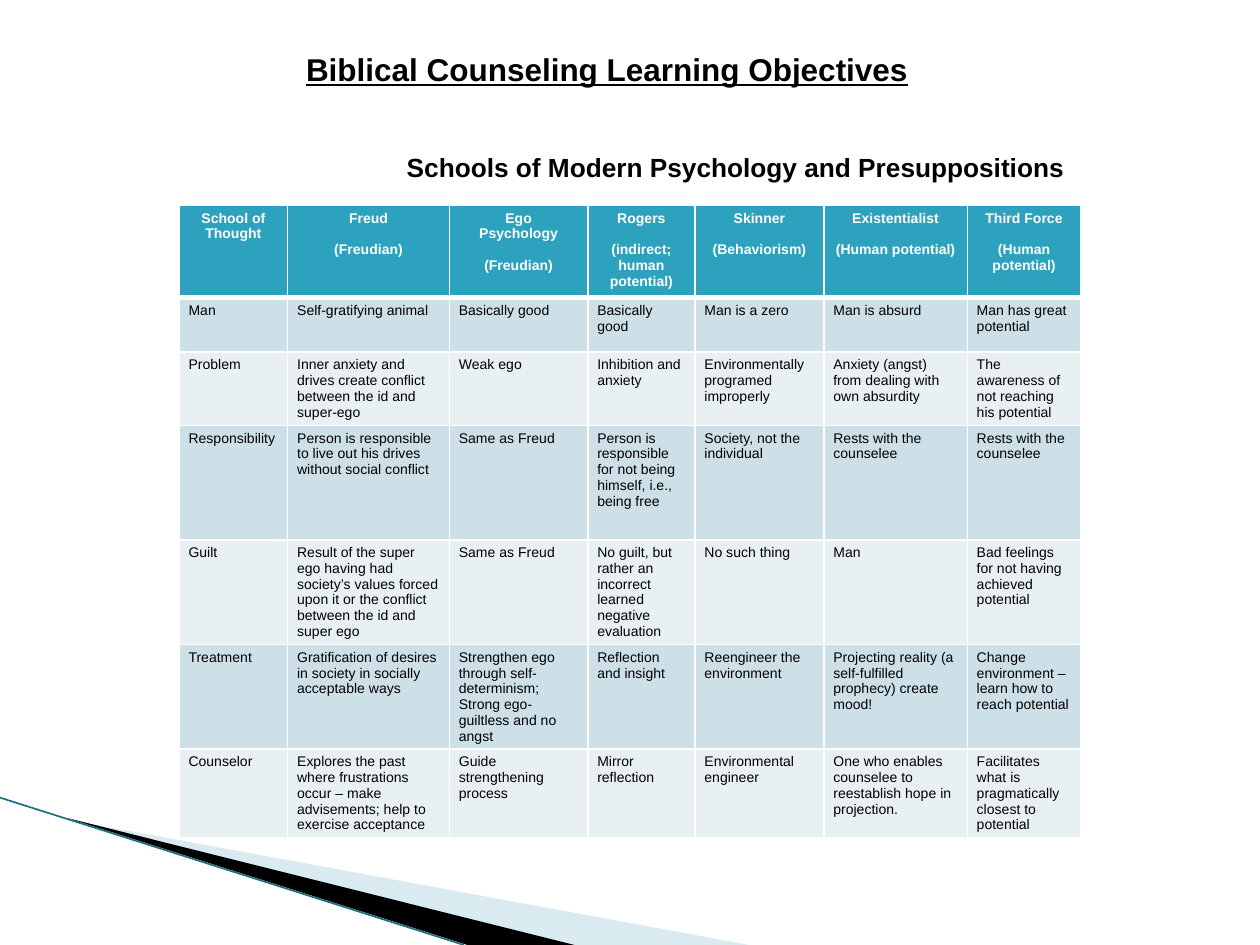
from dataclasses import dataclass
from typing import NamedTuple

from lxml.etree import SubElement
from pptx import Presentation
from pptx.dml.color import RGBColor
from pptx.enum.text import PP_ALIGN
from pptx.oxml.ns import qn
from pptx.util import Cm, Pt


@dataclass(frozen=True)
class Theme:
    font: str = "Arial"
    title_size: float = 18
    subtitle_size: float = 15
    table_size: float = 8
    ink: str = "000000"
    paper: str = "FFFFFF"
    header: str = "2DA2BF"
    bands: tuple = ("CDE0E8", "E8F0F4")
    pale_wedge: str = "A0CBDC"
    edge: str = "1E7080"


class Box(NamedTuple):
    """A region of the slide in centimetres."""
    left: float
    top: float
    width: float
    height: float

    def lengths(self):
        return [Cm(value) for value in self]


THEME = Theme()
COLUMN_WIDTHS = (2.19, 3.26, 2.79, 2.16, 2.6, 2.89, 2.29)
ROW_HEIGHTS = (1.86, 1.1, 1.47, 2.31, 2.08, 2.08, 1.75)
SCHOOLS = [
    ("School of Thought",),
    ("Freud", "(Freudian)"),
    ("Ego", "Psychology", "(Freudian)"),
    ("Rogers", "(indirect; human potential)"),
    ("Skinner", "(Behaviorism)"),
    ("Existentialist", "(Human potential)"),
    ("Third Force", "(Human potential)"),
]
PRESUPPOSITIONS = [
    ["Man", "Self-gratifying animal", "Basically good", "Basically good",
     "Man is a zero", "Man is absurd", "Man has great potential"],
    ["Problem",
     "Inner anxiety and drives create conflict between the id and super-ego",
     "Weak ego", "Inhibition and anxiety",
     "Environmentally programed improperly",
     "Anxiety (angst) from dealing with own absurdity",
     "The awareness of not reaching his potential"],
    ["Responsibility",
     "Person is responsible to live out his drives without social conflict",
     "Same as Freud",
     "Person is responsible for not being himself, i.e., being free",
     "Society, not the individual", "Rests with the counselee",
     "Rests with the counselee"],
    ["Guilt",
     "Result of the super ego having had society’s values forced upon it "
     "or the conflict between the id and super ego",
     "Same as Freud",
     "No guilt, but rather an incorrect learned negative evaluation",
     "No such thing", "Man",
     "Bad feelings for not having achieved potential"],
    ["Treatment",
     "Gratification of desires in society in socially acceptable ways",
     ("Strengthen ego through self-determinism;",
      "Strong ego-guiltless and no angst"),
     "Reflection and insight", "Reengineer the environment",
     "Projecting reality (a self-fulfilled prophecy) create mood!",
     "Change environment – learn how to reach potential"],
    ["Counselor",
     "Explores the past where frustrations occur – make advisements; "
     "help to exercise acceptance",
     "Guide strengthening process", "Mirror reflection",
     "Environmental engineer",
     "One who enables counselee to reestablish hope in projection.",
     "Facilitates what is pragmatically closest to potential"],
]


def rgb(color):
    return RGBColor.from_string(color)


def write_text(frame, text, size, color=THEME.ink, bold=False,
               underline=False, align=PP_ALIGN.LEFT, last_gap=0):
    """Write a string or a tuple of paragraphs, with a gap above the last."""
    lines = (text,) if isinstance(text, str) else text
    for index, line in enumerate(lines):
        paragraph = frame.paragraphs[0] if index == 0 else frame.add_paragraph()
        paragraph.alignment = align
        if last_gap and 0 < index == len(lines) - 1:
            paragraph.space_before = Pt(last_gap)
        run = paragraph.add_run()
        run.text = line
        font = run.font
        font.name, font.size = THEME.font, Pt(size)
        font.bold, font.underline = bold, underline
        font.color.rgb = rgb(color)


def add_heading(slide, box, text, wrap=True, **text_format):
    frame = slide.shapes.add_textbox(*box.lengths()).text_frame
    frame.word_wrap = wrap
    write_text(frame, text, bold=True, **text_format)


def style_cell(cell, fill, bottom_width=1):
    properties = cell._tc.get_or_add_tcPr()
    widths = {"a:lnL": 1, "a:lnR": 1, "a:lnT": 1, "a:lnB": bottom_width}
    for side, width in widths.items():
        border = SubElement(properties, qn(side), w=str(Pt(width)))
        solid = SubElement(border, qn("a:solidFill"))
        SubElement(solid, qn("a:srgbClr"), val=THEME.paper)
    cell.fill.solid()
    cell.fill.fore_color.rgb = rgb(fill)
    cell.margin_left = cell.margin_right = Cm(0.19)
    cell.margin_top = cell.margin_bottom = Cm(0.1)


def add_schools_table(slide, box):
    table = slide.shapes.add_table(
        len(ROW_HEIGHTS), len(COLUMN_WIDTHS), *box.lengths()).table
    for column, width in zip(table.columns, COLUMN_WIDTHS):
        column.width = Cm(width)
    for row, height in zip(table.rows, ROW_HEIGHTS):
        row.height = Cm(height)
    for cell, school in zip(table.rows[0].cells, SCHOOLS):
        style_cell(cell, THEME.header, bottom_width=3)
        write_text(cell.text_frame, school, THEME.table_size, THEME.paper,
                   bold=True, align=PP_ALIGN.CENTER, last_gap=9.2)
    for index, entries in enumerate(PRESUPPOSITIONS):
        for cell, entry in zip(table.rows[index + 1].cells, entries):
            style_cell(cell, THEME.bands[index % 2])
            write_text(cell.text_frame, entry, THEME.table_size)


def add_wedge(slide, box, points, color, opacity=100):
    (start_x, start_y), *others = [
        (Cm(box.left + x), Cm(box.top + y)) for x, y in points]
    builder = slide.shapes.build_freeform(start_x, start_y)
    builder.add_line_segments(others)
    wedge = builder.convert_to_shape()
    wedge.shadow.inherit = False
    wedge.line.fill.background()
    wedge.fill.solid()
    wedge.fill.fore_color.rgb = rgb(color)
    if opacity < 100:
        fill_color = wedge._element.spPr.find(f".//{qn('a:srgbClr')}")
        SubElement(fill_color, qn("a:alpha"), val=str(opacity * 1000))


def add_corner_sweep(slide, box):
    """Two wedges and an edge line sweeping down to the bottom of the box."""
    bottom = box.height
    add_wedge(slide, box, [(1.4, 0.45), (box.width, bottom), (11.58, bottom)],
              THEME.pale_wedge, opacity=40)
    add_wedge(slide, box, [(1.35, 0.41), (11.58, bottom), (9.42, bottom)],
              THEME.ink)
    edge = slide.shapes.add_connector(
        1, Cm(box.left), Cm(box.top), Cm(box.left + 9.35), Cm(box.top + bottom))
    edge.line.color.rgb = rgb(THEME.edge)
    edge.line.width = Pt(0.95)
    SubElement(edge._element.spPr, qn("a:effectLst"))


def main():
    deck = Presentation()
    deck.slide_width, deck.slide_height = Cm(25.4), Cm(19.05)
    slide = deck.slides.add_slide(deck.slide_layouts[6])
    add_corner_sweep(slide, Box(0, 16.08, 15.1, 2.97))
    add_schools_table(
        slide, Box(3.61, 4.14, sum(COLUMN_WIDTHS), sum(ROW_HEIGHTS)))
    add_heading(slide, Box(7.95, 2.92, 13.87, 0.89),
                "Schools of Modern Psychology and Presuppositions",
                wrap=False, size=THEME.subtitle_size)
    add_heading(slide, Box(5.92, 0.89, 12.78, 1.02),
                "Biblical Counseling Learning Objectives",
                size=THEME.title_size, underline=True)
    deck.save("out.pptx")


if __name__ == "__main__":
    main()
